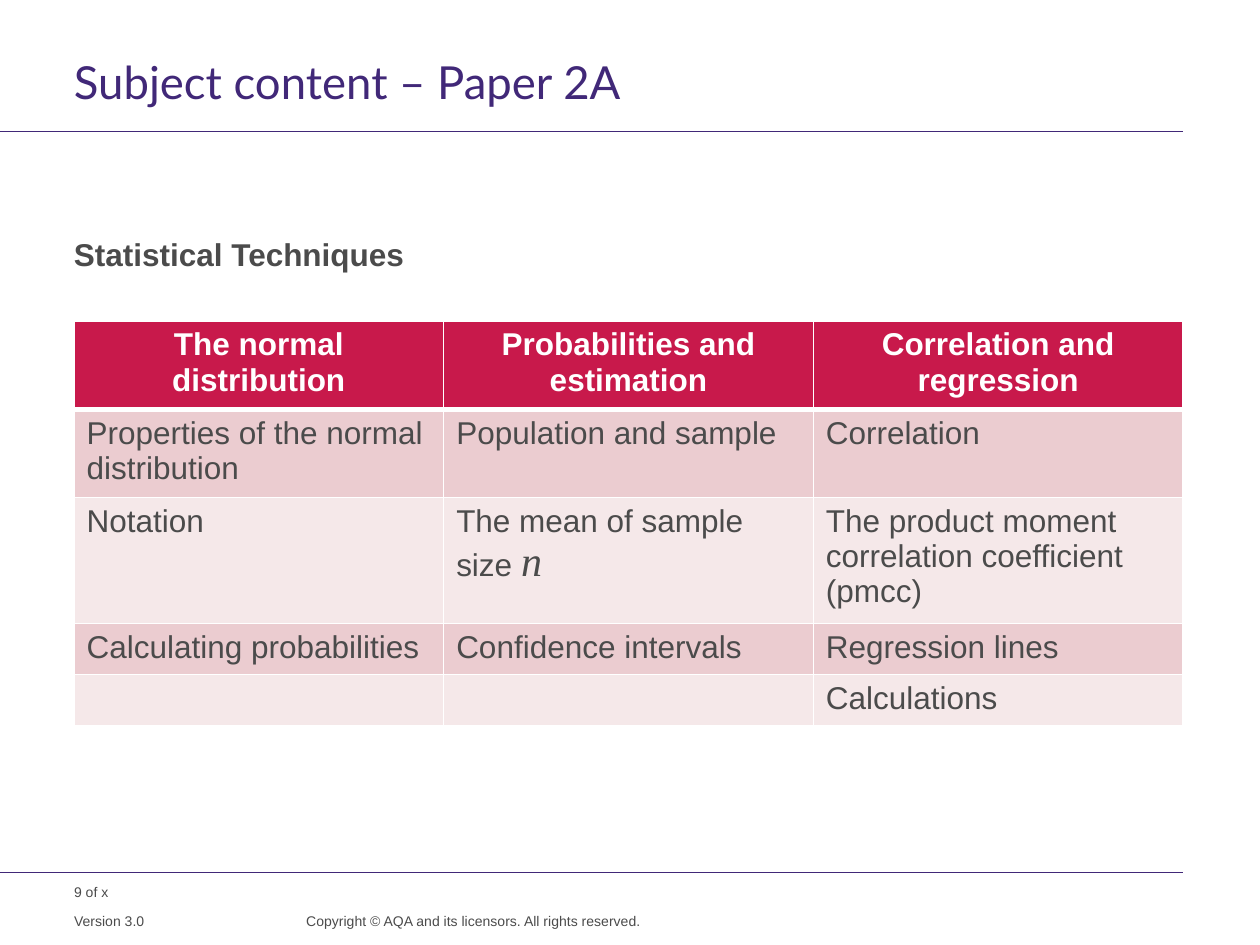
"""Build the Paper 2A subject content slide."""
from lxml import etree
from pptx import Presentation
from pptx.dml.color import RGBColor
from pptx.enum.shapes import MSO_CONNECTOR
from pptx.enum.text import PP_ALIGN
from pptx.oxml.ns import qn
from pptx.util import Emu, Pt

STRAIGHT = MSO_CONNECTOR.STRAIGHT
LEFT, CENTER, RIGHT = PP_ALIGN.LEFT, PP_ALIGN.CENTER, PP_ALIGN.RIGHT
PURPLE, GREY, WHITE, CRIMSON = "412878", "4B4B4B", "FFFFFF", "C8194B"
BANDS = ["EBCCD0", "F5E8E9"]
MARGIN, CONTENT_WIDTH = 74, 1109
RULES = [132, 873]

TEXTS = [
    ("9 of x", (MARGIN, 884, 198, 18), {"size": 8}),
    ("Subject content – Paper 2A", (MARGIN, 60, CONTENT_WIDTH, 59),
     {"size": 26, "font": "Lato", "color": PURPLE, "spacing": 28}),
    ("Copyright © AQA and its licensors. All rights reserved.", (272, 912, 369, 33),
     {"size": 8, "align": RIGHT, "spacing": 10}),
    ("Version 3.0", (MARGIN, 912, 185, 17), {"size": 8, "spacing": 10}),
    ("Statistical Techniques", (MARGIN, 238, CONTENT_WIDTH, 60),
     {"bold": True, "spacing": 20}),
]
TABLE_TOP, ROW_HEIGHT = 321, 51
VARIABLE = {"size": 24, "font": "Times New Roman", "italic": True}
ROWS = [
    ["The normal distribution", "Probabilities and estimation", "Correlation and regression"],
    ["Properties of the normal distribution", "Population and sample", "Correlation"],
    ["Notation", "The mean of sample size ", "The product moment correlation coefficient (pmcc)"],
    ["Calculating probabilities", "Confidence intervals", "Regression lines"],
    ["", "", "Calculations"],
]
VARIABLES = {(2, 1): "n"}


def px(length):
    return Emu(round(length * 914400 / 126))


def rgb(color):
    return RGBColor.from_string(color)


def write(para, text, size=18, font="Arial", color=GREY, bold=False, italic=False,
          align=LEFT, spacing=None):
    para.alignment = align
    if spacing:
        para.line_spacing = Pt(spacing)
    span = para.add_run()
    span.text = text
    span.font.size, span.font.name = Pt(size), font
    span.font.bold, span.font.italic = bold, italic
    span.font.color.rgb = rgb(color)


def add_text(page, text, place, style):
    frame = page.shapes.add_textbox(*map(px, place)).text_frame
    frame.word_wrap = True
    frame.margin_left = frame.margin_top = frame.margin_right = frame.margin_bottom = 0
    write(frame.paragraphs[0], text, **style)


def add_rule(page, y):
    rule = page.shapes.add_connector(STRAIGHT, 0, px(y), px(MARGIN + CONTENT_WIDTH), px(y))
    rule.line.color.rgb = rgb(PURPLE)
    rule.line.width = Pt(0.6)
    etree.SubElement(rule._element.spPr, qn("a:effectLst"))


def add_borders(cell, widths):
    properties = cell._tc.get_or_add_tcPr()
    for side, width in widths.items():
        line = etree.SubElement(properties, qn(f"a:ln{side}"), w=str(Pt(width)))
        fill = etree.SubElement(line, qn("a:solidFill"))
        etree.SubElement(fill, qn("a:srgbClr"), val=WHITE)


def add_topics(page):
    height = ROW_HEIGHT * len(ROWS)
    table = page.shapes.add_table(len(ROWS), len(ROWS[0]), px(MARGIN), px(TABLE_TOP),
                                  px(CONTENT_WIDTH), px(height)).table
    for r, row in enumerate(ROWS):
        header = r == 0
        style = {"color": WHITE, "bold": True, "align": CENTER} if header else {}
        widths = {"L": 1, "R": 1, "T": 3 if r == 1 else 1, "B": 3 if header else 1}
        for c, text in enumerate(row):
            cell = table.cell(r, c)
            add_borders(cell, widths)
            cell.fill.solid()
            cell.fill.fore_color.rgb = rgb(CRIMSON if header else BANDS[(r - 1) % 2])
            para = cell.text_frame.paragraphs[0]
            if text:
                write(para, text, **style)
            if (r, c) in VARIABLES:
                write(para, VARIABLES[r, c], **VARIABLE)


def main():
    deck = Presentation()
    deck.slide_width, deck.slide_height = px(1260), px(945)
    page = deck.slides.add_slide(deck.slide_layouts[6])
    for y in RULES:
        add_rule(page, y)
    for text, place, style in TEXTS:
        add_text(page, text, place, style)
    add_topics(page)
    deck.save("out.pptx")


if __name__ == "__main__":
    main()
